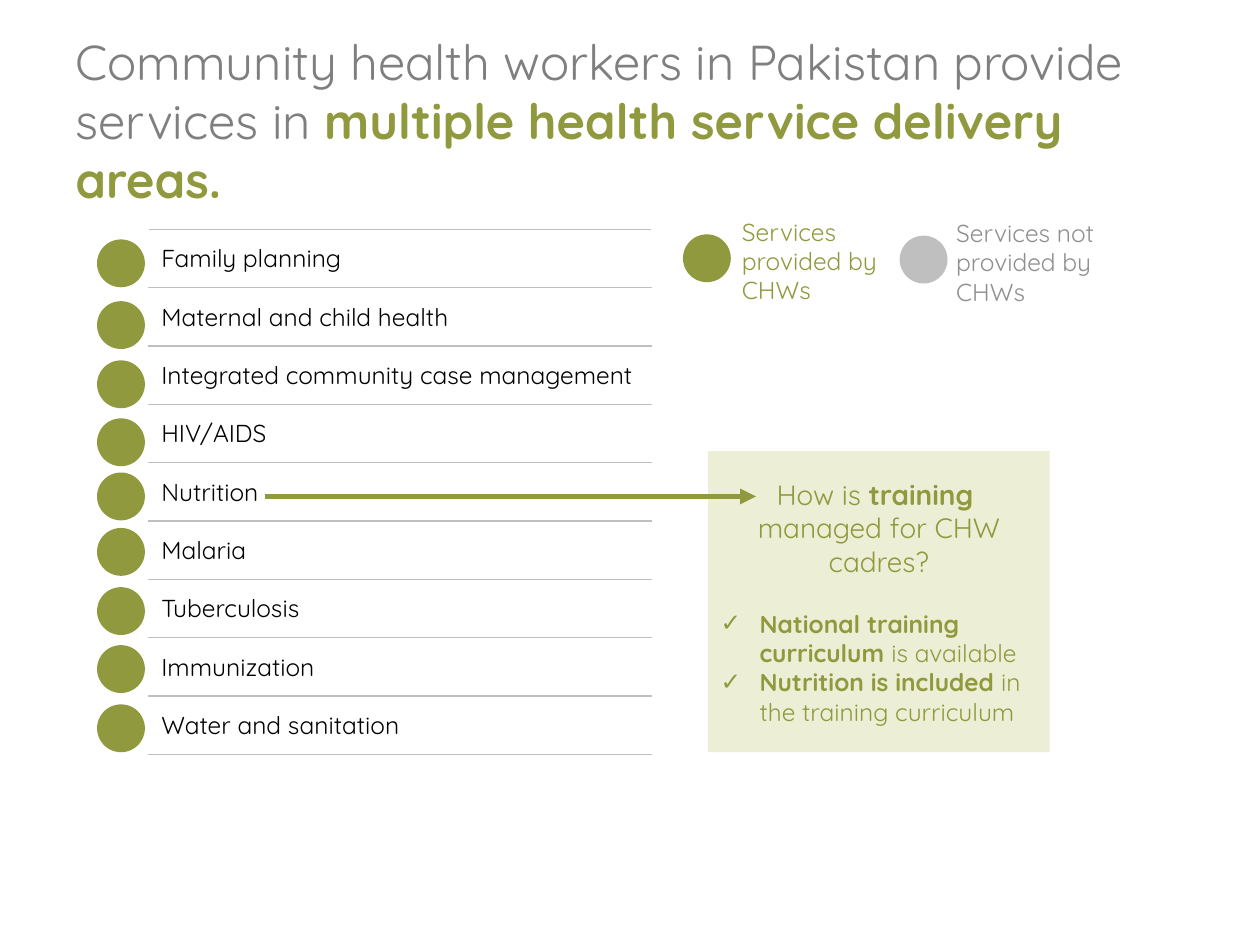
"""Build a slide on the services that community health workers provide in Pakistan."""
from lxml.etree import SubElement
from pptx import Presentation
from pptx.dml.color import RGBColor
from pptx.enum.shapes import MSO_CONNECTOR, MSO_SHAPE
from pptx.enum.text import MSO_ANCHOR, MSO_AUTO_SIZE, PP_ALIGN
from pptx.oxml import parse_xml
from pptx.oxml.ns import nsdecls, qn
from pptx.util import Inches, Pt

FONT = "Quicksand"
GREEN = RGBColor(0x91, 0x99, 0x3E)
PALE_GREEN = RGBColor(0xEC, 0xEE, 0xD5)
TITLE_GRAY = RGBColor(0x7F, 0x7F, 0x7F)
LEGEND_GRAY = RGBColor(0x8F, 0x8F, 0x8F)
RULE_GRAY = RGBColor(0xBF, 0xBF, 0xBF)
BLACK = RGBColor(0, 0, 0)

TITLE = [
    ("Community health workers in Pakistan provide services in ", {"color": TITLE_GRAY}),
    ("multiple health service delivery areas.", {"color": GREEN, "bold": True}),
]
SERVICES = [
    ("Family planning", 1.9),
    ("Maternal and child health", 2.39),
    ("Integrated community case management", 2.86),
    ("HIV/AIDS", 3.32),
    ("Nutrition", 3.75),
    ("Malaria", 4.19),
    ("Tuberculosis", 4.66),
    ("Immunization", 5.12),
    ("Water and sanitation", 5.59),
]
LEGEND = [
    ("Services provided by CHWs", GREEN, GREEN, (5.42, 1.86), (5.79, 1.67)),
    ("Services not provided by CHWs", RULE_GRAY, LEGEND_GRAY, (7.14, 1.87), (7.49, 1.68)),
]
QUESTION = [
    [("How is ", False), ("training ", True)],
    [("managed for CHW cadres?", False)],
]
ANSWERS = [
    [("National training curriculum ", True), ("is available", False)],
    [("Nutrition is included", True), (" in the training curriculum", False)],
]
DOT = 0.38
ROW_HEIGHT = 4.17 / len(SERVICES)
COLUMNS = (0.51, 3.99)


def add_span(para, text, size, color, bold=False):
    span = para.add_run()
    span.text = text
    formats = {"name": FONT, "size": Pt(size), "bold": bold}
    for name, value in formats.items():
        setattr(span.font, name, value)
    span.font.color.rgb = color


def add_filled(page, kind, color, *place):
    shape = page.shapes.add_shape(kind, *map(Inches, place))
    shape.shadow.inherit = False
    shape.fill.solid()
    shape.fill.fore_color.rgb = color
    shape.line.fill.background()
    return shape


def add_title(page):
    title = page.shapes.title
    place = {"left": 0.5, "top": 0.33, "width": 8.83, "height": 1.24}
    for name, value in place.items():
        setattr(title, name, Inches(value))
    frame = title.text_frame
    frame.auto_size = MSO_AUTO_SIZE.NONE
    frame.vertical_anchor = MSO_ANCHOR.MIDDLE
    para = frame.paragraphs[0]
    para.alignment = PP_ALIGN.LEFT
    for text, style in TITLE:
        add_span(para, text, 28, **style)


def rule_cell(cell):
    properties = cell._tc.get_or_add_tcPr()
    for position, side in enumerate(("lnT", "lnB")):
        properties.insert(position, parse_xml(
            f'<a:{side} {nsdecls("a")} w="{Pt(1)}"><a:solidFill>'
            f'<a:srgbClr val="{RULE_GRAY}"/></a:solidFill></a:{side}>'))


def add_services(page):
    frame = page.shapes.add_table(
        len(SERVICES), len(COLUMNS), Inches(0.67), Inches(1.82),
        Inches(sum(COLUMNS)), Inches(ROW_HEIGHT * len(SERVICES)))
    table = frame.table
    table.first_row = table.horz_banding = False
    for column, width in zip(table.columns, COLUMNS):
        column.width = Inches(width)
    for row, (service, dot_top) in enumerate(SERVICES):
        table.rows[row].height = Inches(ROW_HEIGHT)
        for cell in table.rows[row].cells:
            cell.fill.background()
            cell.vertical_anchor = MSO_ANCHOR.MIDDLE
        add_span(cell.text_frame.paragraphs[0], service, 14, BLACK)
        rule_cell(cell)
        add_filled(page, MSO_SHAPE.OVAL, GREEN, 0.77, dot_top, DOT, DOT)


def add_legend(page):
    for text, dot_color, text_color, dot_place, text_place in LEGEND:
        add_filled(page, MSO_SHAPE.OVAL, dot_color, *dot_place, DOT, DOT)
        box = page.shapes.add_textbox(*map(Inches, (*text_place, 1.35, 0.81)))
        box.text_frame.word_wrap = True
        box.text_frame.auto_size = MSO_AUTO_SIZE.SHAPE_TO_FIT_TEXT
        add_span(box.text_frame.paragraphs[0], text, 14, text_color)


def add_check(para):
    properties = para._p.get_or_add_pPr()
    properties.set("marL", str(Inches(0.31)))
    properties.set("indent", str(-Inches(0.31)))
    SubElement(properties, qn("a:buFont")).set("typeface", "Wingdings")
    properties[-1].set("typeface", "Arial")
    SubElement(properties, qn("a:buChar")).set("char", "✓")


def add_training(page):
    panel = add_filled(page, MSO_SHAPE.RECTANGLE, PALE_GREEN, 5.62, 3.58, 2.71, 2.39)
    frame = panel.text_frame
    frame.word_wrap = True
    frame.vertical_anchor = MSO_ANCHOR.MIDDLE
    for index, spans in enumerate(QUESTION + ANSWERS):
        para = frame.add_paragraph() if index else frame.paragraphs[0]
        is_question = index < len(QUESTION)
        para.alignment = PP_ALIGN.CENTER if is_question else PP_ALIGN.LEFT
        if index == len(QUESTION):
            para.space_before = Pt(17.5)
        if not is_question:
            add_check(para)
        for text, bold in spans:
            add_span(para, text, 16 if is_question else 14, GREEN, bold)


def add_arrow(page):
    arrow = page.shapes.add_connector(
        MSO_CONNECTOR.STRAIGHT, *map(Inches, (2.1, 3.94, 6, 3.94)))
    arrow.line.color.rgb = GREEN
    arrow.line.width = Pt(3)
    SubElement(arrow.line._get_or_add_ln(), qn("a:tailEnd")).set("type", "triangle")
    SubElement(arrow._element.spPr, qn("a:effectLst"))


def main():
    deck = Presentation()
    deck.slide_width, deck.slide_height = Inches(10), Inches(7.5)
    page = deck.slides.add_slide(deck.slide_layouts[5])
    for add_part in (add_title, add_services, add_legend, add_training, add_arrow):
        add_part(page)
    deck.save("out.pptx")


if __name__ == "__main__":
    main()
